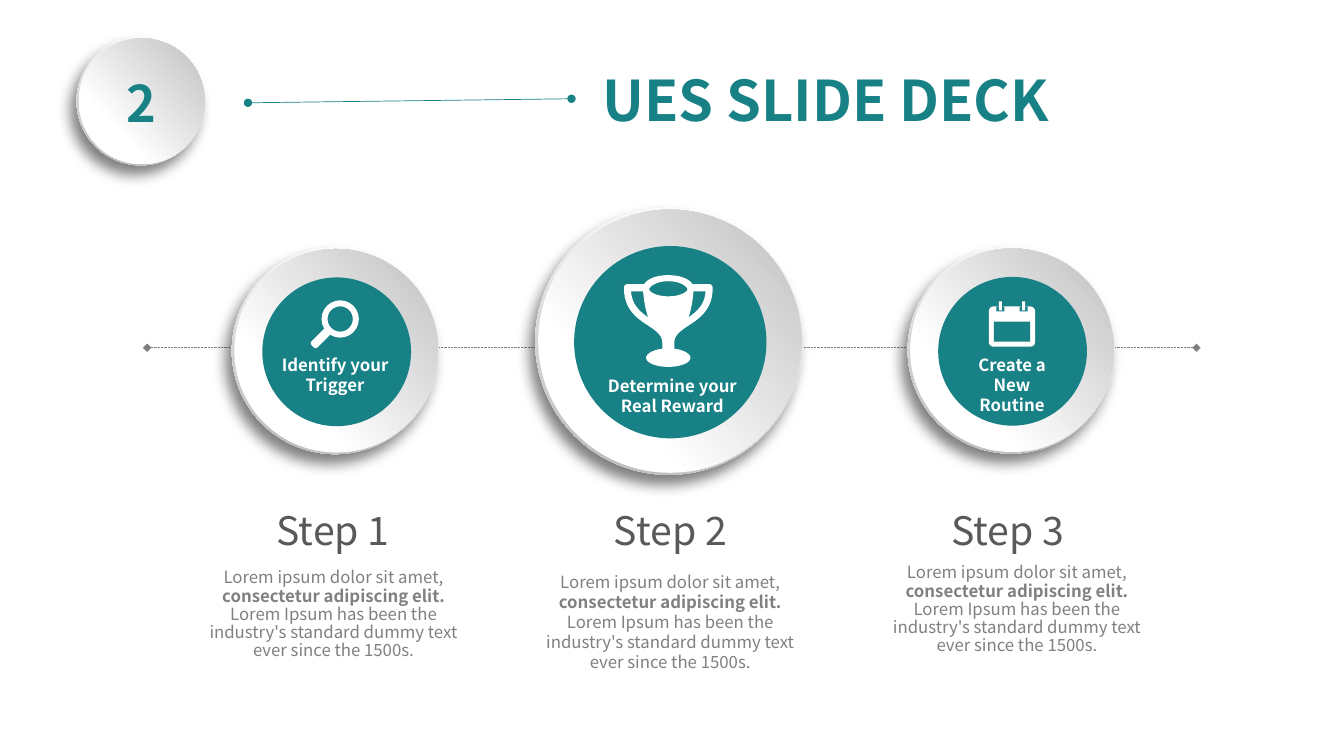
import lxml.etree
import pptx
import pptx.dml.color
import pptx.enum.dml
import pptx.enum.shapes
import pptx.enum.text
import pptx.oxml.ns
import pptx.util
from dataclasses import dataclass

CELL = pptx.util.Inches(0.1)  # the page is a grid of square cells
COLUMNS, ROWS = 133.33, 75
SHAPE = pptx.enum.shapes.MSO_SHAPE
CENTER = pptx.enum.text.PP_ALIGN.CENTER
LEFT = pptx.enum.text.PP_ALIGN.LEFT
TOP = pptx.enum.text.MSO_ANCHOR.TOP
MIDDLE = pptx.enum.text.MSO_ANCHOR.MIDDLE


@dataclass(frozen=True)
class Theme:
    font: str = "Noto Sans CJK SC"
    teal: str = "188186"
    white: str = "FFFFFF"
    heading: str = "595959"
    gray: str = "808080"
    shadow: str = "000000"
    rim: tuple = ((0.17, "FFFFFF"), (0.88, "B8B8B8"))
    face: tuple = ((0.29, "FFFFFF"), (0.98, "BFBFBF"))
    title_size: int = 40
    number_size: int = 36
    step_size: int = 28
    text_size: int = 12


THEME = Theme()
LOREM = (("Lorem ipsum dolor sit amet, ", False),
         ("consectetur adipiscing elit. ", True),
         ("Lorem Ipsum has been the industry's standard dummy text "
          "ever since the 1500s.", False))


def cells(*counts):
    return [round(count * CELL) for count in counts]


def color(code):
    return pptx.dml.color.RGBColor.from_string(code)


def set_format(target, values):
    for name, value in values.items():
        setattr(target, name, value)


def write(box, spans, size, code, align=CENTER, anchor=TOP, wrap=True,
          inset=(1, 0.5), spacing=1.0):
    """Fill a box with one paragraph of (text, bold) spans."""
    across, down = cells(*inset)
    set_format(box.text_frame, {
        "word_wrap": wrap, "vertical_anchor": anchor,
        "auto_size": pptx.enum.text.MSO_AUTO_SIZE.NONE,
        "margin_left": across, "margin_right": across,
        "margin_top": down, "margin_bottom": down})
    para = box.text_frame.paragraphs[0]
    set_format(para, {"alignment": align, "line_spacing": spacing,
                      "space_before": pptx.util.Pt(0)})
    for text, bold in spans:
        span = para.add_run()
        span.text = text
        set_format(span.font, {"name": THEME.font, "bold": bold,
                               "size": pptx.util.Pt(size)})
        span.font.color.rgb = color(code)


def add_text(page, place, spans, size, code, **options):
    write(page.shapes.add_textbox(*cells(*place)), spans, size, code, **options)


def add_shape(page, kind, place, code=None, turn=0):
    shape = page.shapes.add_shape(kind, *cells(*place))
    shape.shadow.inherit = False
    shape.line.fill.background()
    shape.rotation = turn
    if code:
        shape.fill.solid()
        shape.fill.fore_color.rgb = color(code)
    return shape


def add_circle(page, x, y, size, code=None, turn=0):
    place = (x - size / 2, y - size / 2, size, size)
    return add_shape(page, SHAPE.OVAL, place, code, turn)


def shade(shape, stops):
    shape.fill.gradient()
    shape.fill.gradient_angle = 315
    for stop, (position, code) in zip(shape.fill.gradient_stops, stops):
        stop.position = position
        stop.color.rgb = color(code)


def add_child(parent, tag, **attributes):
    return lxml.etree.SubElement(parent, pptx.oxml.ns.qn(tag), attributes)


def add_disc(page, x, y, size):
    """Draw a raised disc: a shadowed rim under a slightly smaller face."""
    rim = add_circle(page, x, y, size, turn=62.3)
    shade(rim, THEME.rim)
    effects = rim._element.spPr.find(pptx.oxml.ns.qn("a:effectLst"))
    shadow = add_child(effects, "a:outerShdw", blurRad="127000", dist="101600",
                       dir="7380000", algn="ctr", rotWithShape="0")
    add_child(add_child(shadow, "a:srgbClr", val=THEME.shadow), "a:alpha", val="50000")
    shade(add_circle(page, x + 0.1, y, size * 0.985, turn=273), THEME.face)


def add_line(page, ends, code, cap, dash=None):
    line = page.shapes.add_connector(
        pptx.enum.shapes.MSO_CONNECTOR.STRAIGHT, *cells(*ends))
    line.line.color.rgb = color(code)
    line.line.width = pptx.util.Pt(0.5)
    if dash:
        line.line.dash_style = dash
    for tag in ("a:headEnd", "a:tailEnd"):
        add_child(line.line._get_or_add_ln(), tag, type=cap)
    add_child(line._element.spPr, "a:effectLst")


def trace(start, *segments):
    """Turn segments of one point (line) or three (curve) into points."""
    points = [start]
    for segment in segments:
        if len(segment) == 1:
            points.append(segment[0])
            continue
        knots = (points[-1], *segment)
        for step in range(1, 13):
            t = step / 12
            weights = ((1 - t) ** 3, 3 * t * (1 - t) ** 2, 3 * t * t * (1 - t), t ** 3)
            points.append(tuple(sum(w * knot[axis] for w, knot in zip(weights, knots))
                                for axis in (0, 1)))
    return points


def mirror(points):
    return [(-x, y) for x, y in reversed(points)]


def draw_trophy(page, x, y):
    cup = trace((0, 0), ((14, 0), (22, 5), (24, 9)), ((41, 9),),
                ((43, 9), (44, 11), (44, 13)), ((44, 34), (31, 43), (20, 50)),
                ((11, 56), (6, 60), (6, 67)), ((6, 73),),
                ((15, 74), (22, 78), (22, 82)), ((22, 87), (12, 91), (0, 91)))
    mouth = trace((0, 6), ((13, 6), (19, 12), (19, 14)), ((19, 16), (13, 21), (0, 21)))
    handle = trace((20, 42), ((22, 36), (24, 28), (25, 16)), ((37, 16),),
                   ((36, 30), (28, 36), (20, 42)))
    contours = [[(px * 100, py * 100) for px, py in contour] for contour in
                (cup + mirror(cup), mouth + mirror(mouth), handle, mirror(handle))]
    builder = page.shapes.build_freeform(*contours[0][0], scale=CELL / 1000)
    for index, contour in enumerate(contours):
        if index:
            builder.move_to(*contour[0])
        builder.add_line_segments(contour[1:], close=True)
    trophy = builder.convert_to_shape(*cells(x, y))
    trophy.shadow.inherit = False
    trophy.fill.solid()
    trophy.fill.fore_color.rgb = color(THEME.white)
    trophy.line.fill.background()


def draw_magnifier(page, x, y):
    lens = add_shape(page, SHAPE.DONUT, (x - 1.4, y, 3.7, 3.7), THEME.white)
    lens.adjustments[0] = 0.16
    handle = add_shape(page, SHAPE.ROUNDED_RECTANGLE, (x - 2.6, y + 3.35, 2.2, 0.85),
                       THEME.white, turn=315)
    handle.adjustments[0] = 0.3


def draw_calendar(page, x, y):
    sheet = add_shape(page, SHAPE.ROUNDED_RECTANGLE, (x - 2.3, y + 0.5, 4.6, 4),
                      THEME.white)
    sheet.adjustments[0] = 0.12
    add_shape(page, SHAPE.RECTANGLE, (x - 1.8, y + 2, 3.6, 2), THEME.teal)
    for ring in (x - 1.15, x + 1.15):
        add_shape(page, SHAPE.RECTANGLE, (ring - 0.4, y + 0.5, 0.8, 0.5), THEME.teal)
        add_shape(page, SHAPE.RECTANGLE, (ring - 0.15, y, 0.3, 0.9), THEME.white)


def add_step(page, index, disc, icon, label, label_place, text_place, text_style):
    x, y, size = disc
    add_disc(page, x, y, size)
    add_circle(page, x + 0.15, y + 0.1, size * 0.72, THEME.teal)
    draw_icon, icon_x, icon_y = icon
    draw_icon(page, icon_x, icon_y)
    add_text(page, label_place, [(label, True)], THEME.text_size, THEME.white)
    add_text(page, (17.8 + 33.45 * index, 49.5, 30.5, 6.1),
             [(f"Step {index + 1}", False)], THEME.step_size, THEME.heading,
             anchor=MIDDLE, inset=(1.3, 0.7))
    add_text(page, (*text_place, 28.6, 10.6), LOREM, THEME.text_size, THEME.gray,
             **text_style)


def main():
    deck = pptx.Presentation()
    deck.slide_width, deck.slide_height = cells(COLUMNS, ROWS)
    page = deck.slides.add_slide(deck.slide_layouts[5])

    title = page.shapes.title
    set_format(title, dict(zip(("left", "top", "width", "height"),
                               cells(58.8, 6, 54.5, 7.7))))
    write(title, [("UES SLIDE DECK", True)], THEME.title_size, THEME.teal,
          align=LEFT, wrap=False)
    add_disc(page, 13.95, 10.05, 12.7)
    add_text(page, (7.4, 6.7, 13.2, 7.1), [("2", True)], THEME.number_size, THEME.teal)
    add_line(page, (24.6, 10.2, 56.7, 9.8), THEME.teal, "oval")
    add_line(page, (14.6, 34.5, 118.7, 34.5), THEME.gray, "diamond",
             pptx.enum.dml.MSO_LINE.ROUND_DOT)

    tight, loose = {"spacing": 0.9}, {"inset": (1.3, 0.7)}
    steps = (
        ((33.25, 34.8, 20.5), (draw_magnifier, 33.3, 29.8), "Identify your Trigger",
         (25.9, 34.7, 14.7, 5), (18.8, 56), tight),
        ((66.35, 33.85, 26.5), (draw_trophy, 66.3, 27.3), "Determine your Real Reward",
         (58.8, 36.8, 15.8, 5), (52.2, 56), loose),
        ((100.3, 34.75, 20.5), (draw_calendar, 100.4, 29.9), "Create a New Routine",
         (94.4, 34.7, 12, 7.1), (86.6, 55.5), tight))
    for index, step in enumerate(steps):
        add_step(page, index, *step)
    deck.save("out.pptx")


if __name__ == "__main__":
    main()
